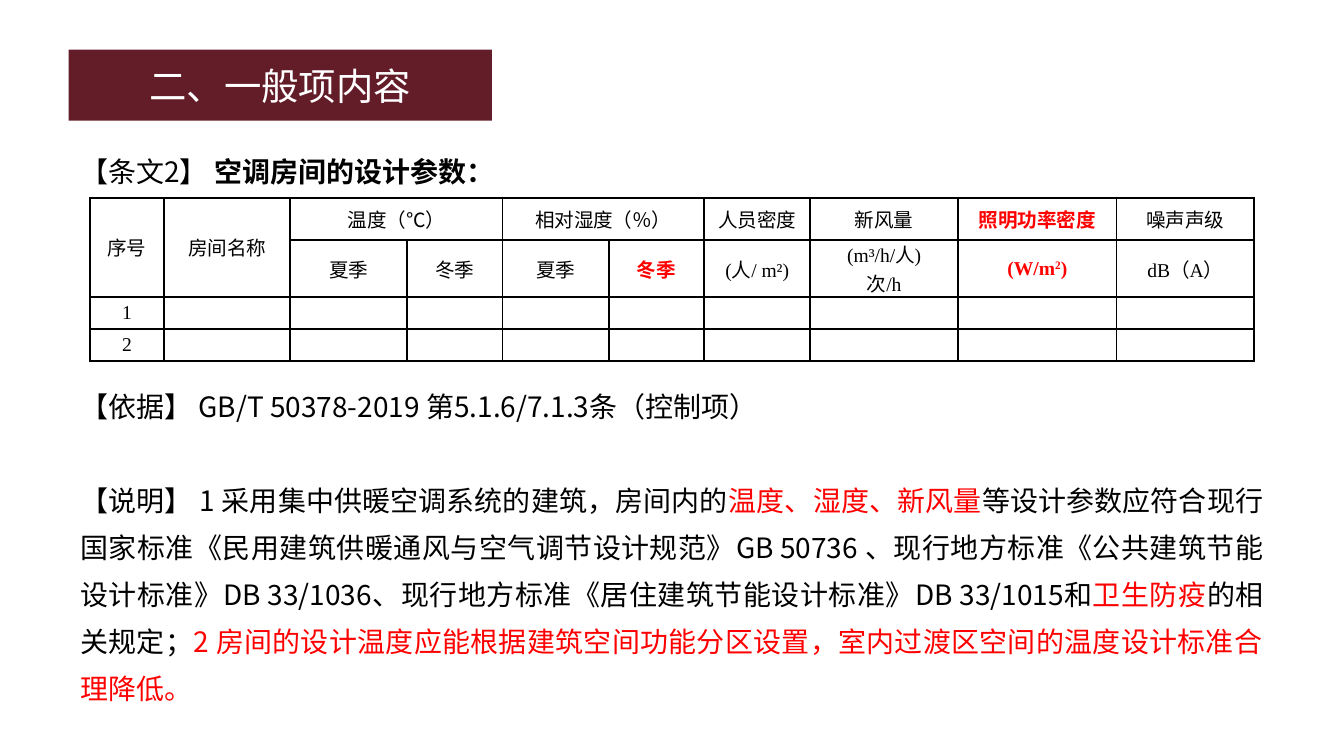
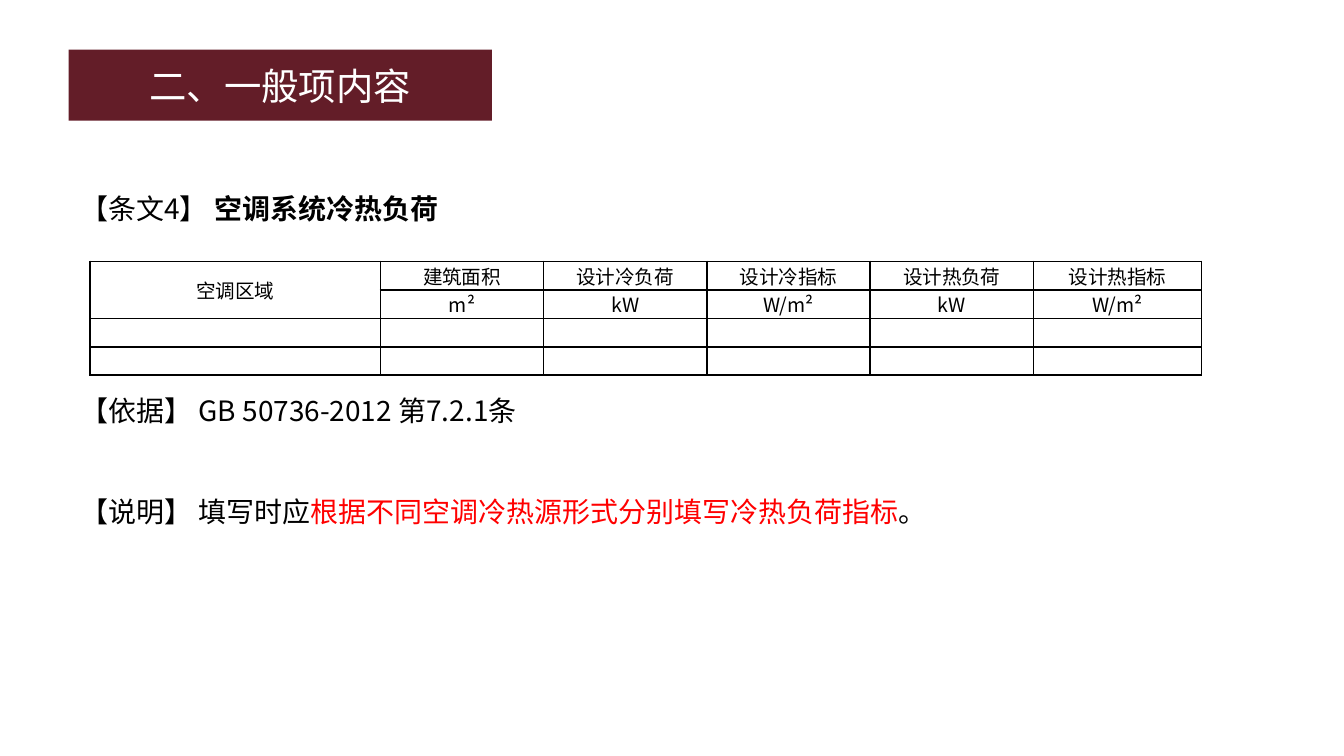
from dataclasses import dataclass
from typing import Optional

import pptx
import pptx.dml.color
import pptx.enum.text
import pptx.oxml.ns
import pptx.util
from lxml import etree

RGBColor = pptx.dml.color.RGBColor
Align = pptx.enum.text.PP_ALIGN
Anchor = pptx.enum.text.MSO_ANCHOR
qn = pptx.oxml.ns.qn

BLACK = RGBColor(0, 0, 0)
WHITE = RGBColor(255, 255, 255)
RED = RGBColor(255, 0, 0)
MAROON = RGBColor(0x63, 0x1D, 0x28)
SANS = "Noto Sans CJK SC"
SERIF = "Times New Roman"
TITLE_SIZE, BODY_SIZE, CELL_SIZE = 20, 15, 10.5
TITLE = "二、一般项内容"
SLIDE_WIDTH = pptx.util.Inches(10)
SLIDE_HEIGHT = SLIDE_WIDTH * 9 // 16


def across(percent: float) -> int:
    return round(SLIDE_WIDTH * percent / 100)


def down(percent: float) -> int:
    return round(SLIDE_HEIGHT * percent / 100)


@dataclass(frozen=True)
class Box:
    left: float
    top: float
    width: float
    height: float

    def lengths(self) -> tuple[int, int, int, int]:
        return across(self.left), down(self.top), across(self.width), down(self.height)


@dataclass(frozen=True)
class Span:
    text: str
    color: Optional[RGBColor] = None
    bold: Optional[bool] = None
    superscript: bool = False


@dataclass(frozen=True)
class Clause:
    spans: list[Span]
    lines_before: int = 0
    heading: bool = False


@dataclass(frozen=True)
class Cell:
    spans: list[Span]
    highlighted: bool = False


@dataclass(frozen=True)
class Grid:
    left: float
    top: float
    columns: list[float]
    rows: list[float]
    cells: list[list[str | Cell]]
    merges: list[tuple[int, int, int, int]]
    font: str


@dataclass(frozen=True)
class Page:
    clauses: list[Clause]
    line_height: float
    margin_top: float
    grid: Grid


TITLE_BOX = Box(5.1, 6.58, 31.5, 9.4)
BODY_BOX = Box(5, 17.78, 90, 78.4)


def format_paragraph(paragraph, size: float, color: RGBColor, font: str,
                     alignment, bold: bool = False) -> None:
    paragraph.alignment = alignment
    paragraph.font.size = pptx.util.Pt(size)
    paragraph.font.bold = bold
    paragraph.font.color.rgb = color
    paragraph.font.name = font
    defaults = paragraph._p.pPr.find(qn("a:defRPr"))
    etree.SubElement(defaults, qn("a:ea")).set("typeface", SANS)


def write_spans(paragraph, spans: list[Span]) -> None:
    for span in spans:
        for number, line in enumerate(span.text.split("\n")):
            if number:
                paragraph.add_line_break()
            run = paragraph.add_run()
            run.text = line
            if span.color is not None:
                run.font.color.rgb = span.color
            if span.bold is not None:
                run.font.bold = span.bold
            if span.superscript:
                run._r.get_or_add_rPr().set("baseline", "30000")


def draw_title(slide) -> None:
    title = slide.shapes.title
    title.left, title.top, title.width, title.height = TITLE_BOX.lengths()
    title.fill.solid()
    title.fill.fore_color.rgb = MAROON
    frame = title.text_frame
    frame.auto_size = pptx.enum.text.MSO_AUTO_SIZE.NONE
    frame.vertical_anchor = Anchor.MIDDLE
    paragraph = frame.paragraphs[0]
    write_spans(paragraph, [Span(TITLE)])
    format_paragraph(paragraph, TITLE_SIZE, WHITE, SANS, Align.CENTER)


def draw_clauses(slide, page: Page) -> None:
    frame = slide.shapes.add_textbox(*BODY_BOX.lengths()).text_frame
    frame.word_wrap = True
    frame.margin_top = down(page.margin_top)
    for number, clause in enumerate(page.clauses):
        paragraph = frame.add_paragraph() if number else frame.paragraphs[0]
        write_spans(paragraph, clause.spans)
        paragraph.line_spacing = pptx.util.Pt(page.line_height)
        paragraph.space_before = pptx.util.Pt(page.line_height * clause.lines_before)
        alignment = Align.LEFT if clause.heading else Align.JUSTIFY
        format_paragraph(paragraph, BODY_SIZE, BLACK, SANS, alignment)
        if clause.heading:
            hanging = across(3.9)
            paragraph._p.pPr.set("marL", str(hanging))
            paragraph._p.pPr.set("indent", str(-hanging))


def draw_borders(cell) -> None:
    properties = cell._tc.get_or_add_tcPr()
    for side in ("lnL", "lnR", "lnT", "lnB"):
        line = etree.SubElement(properties, qn(f"a:{side}"))
        line.set("w", str(pptx.util.Pt(1)))
        fill = etree.SubElement(line, qn("a:solidFill"))
        etree.SubElement(fill, qn("a:srgbClr")).set("val", str(BLACK))


def draw_cell(cell, content: str | Cell, font: str) -> None:
    draw_borders(cell)
    cell.fill.background()
    cell.vertical_anchor = Anchor.MIDDLE
    cell.margin_left = cell.margin_right = across(0.7)
    cell.margin_top = cell.margin_bottom = 0
    entry = Cell([Span(content)] if content else []) if isinstance(content, str) else content
    paragraph = cell.text_frame.paragraphs[0]
    write_spans(paragraph, entry.spans)
    color = RED if entry.highlighted else BLACK
    format_paragraph(paragraph, CELL_SIZE, color, font, Align.CENTER, entry.highlighted)
    if not entry.spans:
        ending = etree.SubElement(paragraph._p, qn("a:endParaRPr"))
        ending.set("sz", str(round(CELL_SIZE * 100)))
        etree.SubElement(ending, qn("a:latin")).set("typeface", font)


def draw_grid(slide, grid: Grid) -> None:
    box = Box(grid.left, grid.top, sum(grid.columns), sum(grid.rows))
    table = slide.shapes.add_table(len(grid.rows), len(grid.columns), *box.lengths()).table
    table.first_row = table.horz_banding = False
    for column, width in zip(table.columns, grid.columns):
        column.width = across(width)
    for row, height in zip(table.rows, grid.rows):
        row.height = down(height)
    for row_number, contents in enumerate(grid.cells):
        for column_number, content in enumerate(contents):
            draw_cell(table.cell(row_number, column_number), content, grid.font)
    for top, left, bottom, right in grid.merges:
        table.cell(top, left).merge(table.cell(bottom, right))


def red_cell(*spans: Span) -> Cell:
    return Cell(list(spans), highlighted=True)


ROOM_GRID = Grid(
    left=6.7, top=26.16,
    columns=[5.5, 9.4, 8.7, 7.1, 7.9, 7.1, 7.9, 11, 11.8, 10.2],
    rows=[5.62, 7.5, 4.23, 4.23],
    cells=[
        ["序号", "房间名称", "温度（℃）", "", "相对湿度（％）", "", "人员密度", "新风量",
         red_cell(Span("照明功率密度")), "噪声声级"],
        ["", "", "夏季", "冬季", "夏季", red_cell(Span("冬季")), "(人/ m²)", "(m³/h/人)\n次/h",
         red_cell(Span("(W/m"), Span("2", superscript=True), Span(")")), "dB（A）"],
        ["1"] + [""] * 9,
        ["2"] + [""] * 9,
    ],
    merges=[(0, 0, 1, 0), (0, 1, 1, 1), (0, 2, 0, 3), (0, 4, 0, 5)],
    font=SERIF,
)

LOAD_GRID = Grid(
    left=6.7, top=34.6,
    columns=[21.6] + [12.15] * 4 + [12.5],
    rows=[3.76] * 4,
    cells=[
        ["空调区域", "建筑面积", "设计冷负荷", "设计冷指标", "设计热负荷", "设计热指标"],
        ["", "m²"] + ["kW", "W/m²"] * 2,
        [""] * 6,
        [""] * 6,
    ],
    merges=[(0, 0, 1, 0)],
    font=SANS,
)

PAGES = [
    Page(
        clauses=[
            Clause([Span("【条文2】 "), Span("空调房间的设计参数：", bold=True)], heading=True),
            Clause([Span("【依据】 GB/T 50378-2019 第5.1.6/7.1.3条（控制项）")], lines_before=4),
            Clause([
                Span("【说明】 1 采用集中供暖空调系统的建筑，房间内的"),
                Span("温度、湿度、新风量", RED),
                Span("等设计参数应符合现行国家标准《民用建筑供暖通风与空气调节设计规范》GB 50736 、"
                     "现行地方标准《公共建筑节能设计标准》DB 33/1036、"
                     "现行地方标准《居住建筑节能设计标准》DB 33/1015和"),
                Span("卫生防疫", RED),
                Span("的相关规定；"),
                Span("2 房间的设计温度应能根据建筑空间功能分区设置，"
                     "室内过渡区空间的温度设计标准合理降低。", RED),
            ], lines_before=1),
        ],
        line_height=25.2, margin_top=0.89, grid=ROOM_GRID,
    ),
    Page(
        clauses=[
            Clause([Span("【条文4】 "), Span("空调系统冷热负荷", bold=True)], heading=True),
            Clause([Span("【依据】 GB 50736-2012 第7.2.1条")], lines_before=3),
            Clause([
                Span("【说明】 填写时应"),
                Span("根据不同空调冷热源形式分别填写冷热负荷指标", RED),
                Span("。"),
            ], lines_before=1),
        ],
        line_height=27, margin_top=5.36, grid=LOAD_GRID,
    ),
]


def main() -> None:
    presentation = pptx.Presentation()
    presentation.slide_width = SLIDE_WIDTH
    presentation.slide_height = SLIDE_HEIGHT
    title_only = presentation.slide_layouts[5]
    for page in PAGES:
        slide = presentation.slides.add_slide(title_only)
        draw_title(slide)
        draw_clauses(slide, page)
        draw_grid(slide, page.grid)
    presentation.save("out.pptx")


if __name__ == "__main__":
    main()
